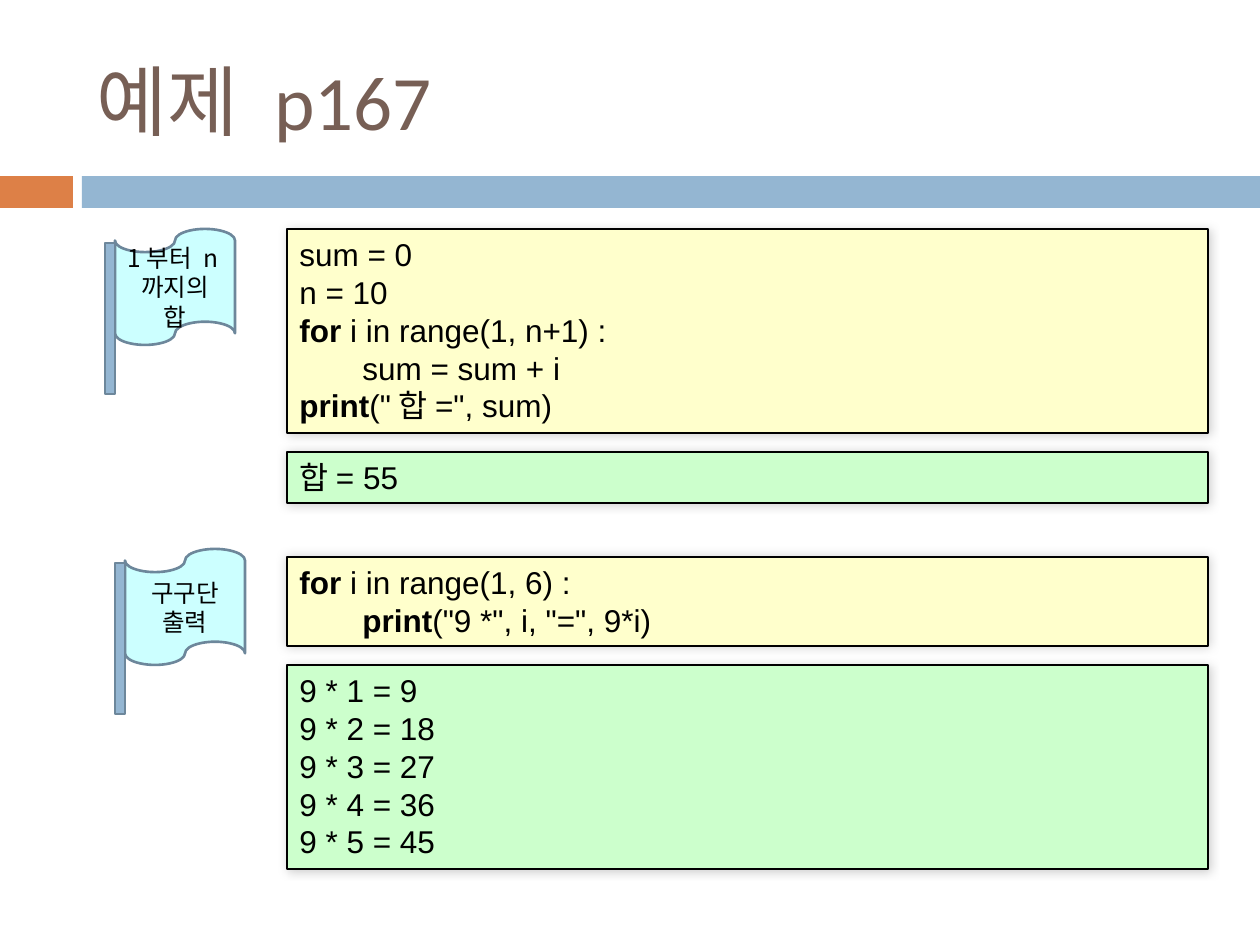
from lxml import etree
from pptx import Presentation
from pptx.dml.color import RGBColor
from pptx.enum.shapes import MSO_SHAPE
from pptx.enum.text import MSO_ANCHOR, PP_ALIGN
from pptx.oxml import parse_xml
from pptx.util import Emu, Pt

RECT, TAPE = MSO_SHAPE.RECTANGLE, MSO_SHAPE.FLOWCHART_PUNCHED_TAPE
MIDDLE, TOP = MSO_ANCHOR.MIDDLE, MSO_ANCHOR.TOP
LEFT, CENTER = PP_ALIGN.LEFT, PP_ALIGN.CENTER
PX = 914400 / 126
NS = "http://schemas.openxmlformats.org/drawingml/2006/main"
KOREAN = "Noto Sans CJK KR"
C = {
    "orange": "DD8047", "blue": "94B6D2", "title": "775F55",
    "code": "FFFFCC", "output": "CCFFCC", "flag": "CCFFFF",
    "edge": "6D879B", "black": "000000",
}
SHADOW = (
    f'<a:effectLst xmlns:a="{NS}"><a:outerShdw blurRad="76200" dist="0" dir="18900000">'
    '<a:srgbClr val="000000"><a:alpha val="20000"/></a:srgbClr></a:outerShdw></a:effectLst>'
)


def add_box(kind, box, fill, line=None, width=0):
    sp = s.shapes.add_shape(kind, *[Emu(round(v * PX)) for v in box])
    sp.shadow.inherit = False
    sp.fill.solid()
    sp.fill.fore_color.rgb = RGBColor.from_string(C[fill])
    if line:
        sp.line.color.rgb = RGBColor.from_string(C[line])
        sp.line.width = Pt(width)
    else:
        sp.line.fill.background()
    return sp


def style_run(r, size, font, color="black", bold=False):
    r.font.size = Pt(size)
    r.font.name = font
    r.font.bold = bold
    r.font.color.rgb = RGBColor.from_string(C[color])
    etree.SubElement(r.font._element, f"{{{NS}}}ea").set("typeface", KOREAN)


prs = Presentation()
prs.slide_width, prs.slide_height = Emu(round(1260 * PX)), Emu(round(945 * PX))
s = prs.slides.add_slide(prs.slide_layouts[5])

add_box(RECT, (0, 176, 73, 32), "orange")
add_box(RECT, (82, 176, 1178, 32), "blue")

title = s.shapes.title
title.left, title.top, title.width, title.height = [
    Emu(round(v * PX)) for v in (84, 32, 1124, 136)]
title.text_frame.text = "예제 p167"
title.text_frame.vertical_anchor = MIDDLE
p = title.text_frame.paragraphs[0]
p.alignment = LEFT
style_run(p.runs[0], 44, "Calibri", "title")

panels = [
    (229, 204, "code", [
        [("sum = 0", False)],
        [("n = 10", False)],
        [("for ", True), ("i in range(1, n+1) :", False)],
        [("\tsum = sum + i", False)],
        [("print", True), ('("합=", sum)', False)],
    ]),
    (452, 51, "output", [[("합= 55", False)]]),
    (557, 89, "code", [
        [("for", True), (" i in range(1, 6) :", False)],
        [("\t", False), ("print", True), ('("9 *", i, "=", 9*i)', False)],
    ]),
    (665, 204, "output", [[(f"9 * {i} = {9 * i}", False)] for i in range(1, 6)]),
]
for top, height, fill, lines in panels:
    sp = add_box(RECT, (287, top, 921, height), fill, "black", 0.75)
    spPr = sp._element.spPr
    spPr.replace(spPr.find(f"{{{NS}}}effectLst"), parse_xml(SHADOW))
    tf = sp.text_frame
    tf.word_wrap = True
    tf.vertical_anchor = TOP
    for n, line in enumerate(lines):
        p = tf.add_paragraph() if n else tf.paragraphs[0]
        p.alignment = LEFT
        for text, bold in line:
            r = p.add_run()
            r.text = text
            style_run(r, 18, "Arial", bold=bold)

for left, top, label in [(105, 229, "1부터 n까지의 합"), (115, 549, "구구단 출력")]:
    sp = add_box(TAPE, (left + 10, top, 120, 116), "flag", "edge", 1.5)
    tf = sp.text_frame
    tf.word_wrap = True
    tf.vertical_anchor = MIDDLE
    tf.text = label
    p = tf.paragraphs[0]
    p.alignment = CENTER
    style_run(p.runs[0], 14, KOREAN)
    add_box(RECT, (left, top + 14, 10, 151), "blue", "edge", 1.5)

prs.save("out.pptx")
